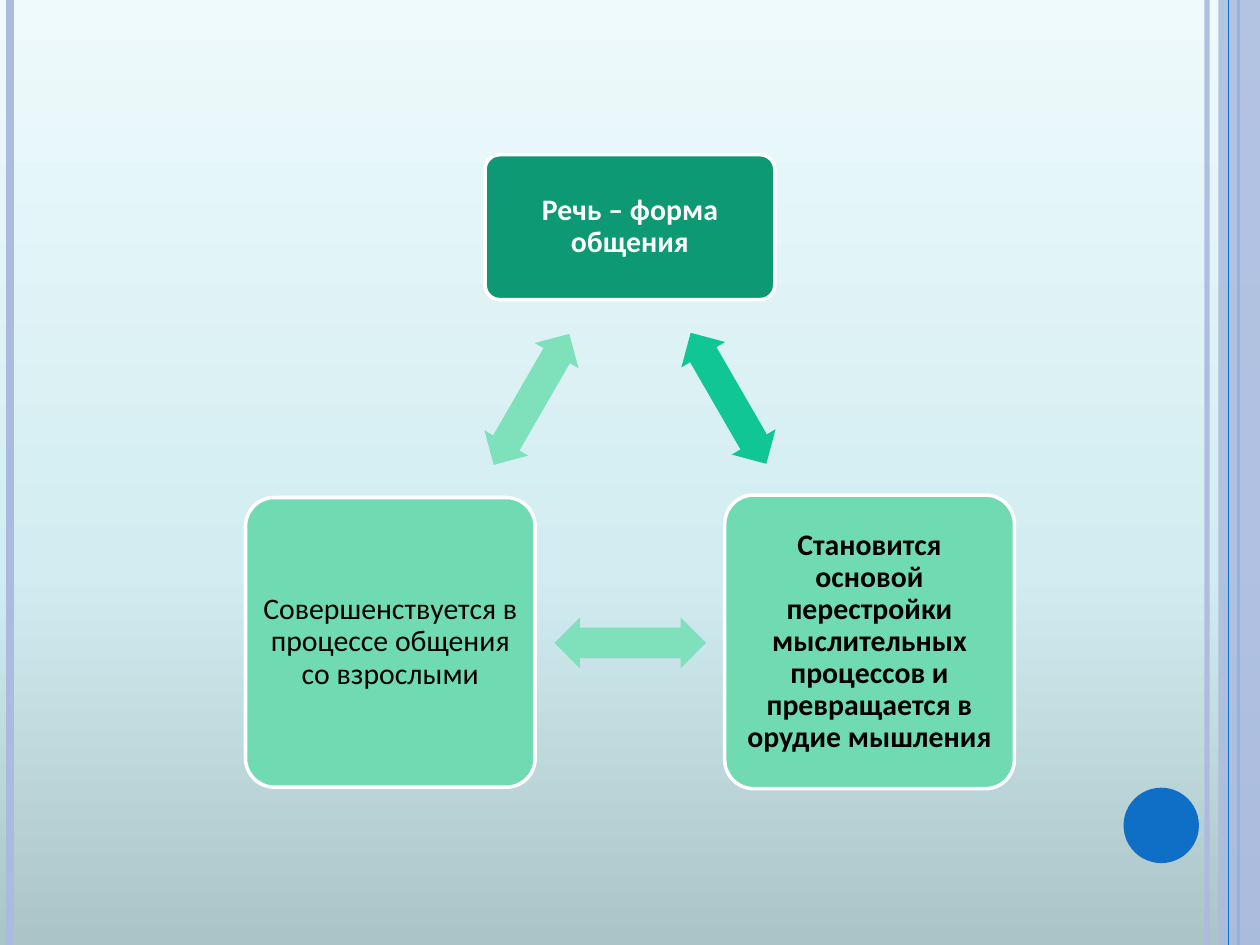
from copy import deepcopy

from lxml.etree import SubElement
from pptx import Presentation
from pptx.dml.color import RGBColor
from pptx.enum.shapes import MSO_CONNECTOR, MSO_SHAPE
from pptx.enum.text import MSO_ANCHOR, PP_ALIGN
from pptx.oxml.ns import qn
from pptx.util import Cm, Pt

WIDTH, HEIGHT = 25.4, 19.05
BLUE, LAVENDER, WHITE, BLACK = "0F6FC6", "ABBBDF", "FFFFFF", "000000"
DARK_GREEN, GREEN, MINT, PALE_MINT = "0C9973", "0FC694", "70DBB2", "7FE1BB"


def color(value):
    """Turn a hex string into a colour."""
    return RGBColor.from_string(value)


def apply_format(target, values):
    """Set each named attribute on the target."""
    for name, value in values.items():
        setattr(target, name, value)


def set_alpha(element, percent):
    """Give the first solid colour in an element an opacity in percent."""
    SubElement(next(element.iter(qn("a:srgbClr"))), qn("a:alpha"), val=str(percent * 1000))


def set_background(slide, stops):
    """Fill the background with a gradient that rises from the bottom."""
    fill = slide.background.fill
    fill.gradient()
    fill.gradient_angle = 90
    stop_list = next(slide.element.iter(qn("a:gsLst")))
    while len(stop_list) < len(stops):
        stop_list.append(deepcopy(stop_list[0]))
    for stop, (position, value) in zip(fill.gradient_stops, stops):
        stop.position = position
        stop.color.rgb = color(value)


def add_stripe(slide, x, value, width, alpha=100):
    """Draw a vertical line over the full slide height."""
    connector = slide.shapes.add_connector(
        MSO_CONNECTOR.STRAIGHT, Cm(x), 0, Cm(x), Cm(HEIGHT))
    connector.line.color.rgb = color(value)
    connector.line.width = Pt(width)
    properties = connector.element.spPr
    if alpha < 100:
        set_alpha(properties, alpha)
    SubElement(properties, qn("a:effectLst"))


def add_figure(slide, kind, box, value, adjustments=()):
    """Add a plain filled preset shape without outline."""
    shape = slide.shapes.add_shape(kind, *map(Cm, box))
    shape.shadow.inherit = False
    shape.fill.solid()
    shape.fill.fore_color.rgb = color(value)
    shape.line.fill.background()
    for index, adjustment in enumerate(adjustments):
        shape.adjustments[index] = adjustment
    return shape


def add_card(slide, box, value, text, text_color, bold):
    """Add a rounded box with a white outline and centred text."""
    shape = add_figure(slide, MSO_SHAPE.ROUNDED_RECTANGLE, box, value, [0.1])
    shape.line.color.rgb = color(WHITE)
    shape.line.width = Pt(2)
    frame = shape.text_frame
    margins = {f"margin_{side}": Cm(0.18) for side in ("left", "top", "right", "bottom")}
    apply_format(frame, {"word_wrap": True, "vertical_anchor": MSO_ANCHOR.MIDDLE, **margins})
    paragraph = frame.paragraphs[0]
    apply_format(paragraph, {"alignment": PP_ALIGN.CENTER, "line_spacing": 0.9})
    run = paragraph.add_run()
    run.text = text
    apply_format(run.font, {"name": "Calibri", "size": Pt(17), "bold": bold})
    run.font.color.rgb = color(text_color)


def add_arrow(slide, left, top, rotation, value):
    """Add a rotated double-headed arrow."""
    box = (left, top, 3.05, 1.02)
    shape = add_figure(slide, MSO_SHAPE.LEFT_RIGHT_ARROW, box, value, [0.6, 0.5])
    shape.rotation = rotation


def add_decoration(slide):
    """Draw the stripes on both edges and the round badge."""
    add_stripe(slide, 24.33, LAVENDER, 3, alpha=93)
    add_stripe(slide, 0.21, LAVENDER, 4.5)
    add_stripe(slide, 24.97, BLUE, 1.5)
    band = add_figure(slide, MSO_SHAPE.RECTANGLE, (24.56, 0, WIDTH - 24.56, HEIGHT), LAVENDER)
    set_alpha(band.element.spPr, 87)
    add_stripe(slide, 24.76, BLUE, 0.75)
    add_figure(slide, MSO_SHAPE.OVAL, (22.65, 15.88, 1.52, 1.52), BLUE)


def main():
    """Build the slide and save it."""
    presentation = Presentation()
    apply_format(presentation, {"slide_width": Cm(WIDTH), "slide_height": Cm(HEIGHT)})
    slide = presentation.slides.add_slide(presentation.slide_layouts[6])
    set_background(slide, [(0, "AAC4C7"), (0.4, "D2EDF1"), (1, "EEFAFC")])
    add_decoration(slide)
    add_card(slide, (9.78, 3.12, 5.84, 2.92), DARK_GREEN,
             "Речь – форма общения", WHITE, True)
    add_arrow(slide, 13.16, 7.52, 60, GREEN)
    add_card(slide, (14.61, 9.98, 5.84, 5.92), MINT,
             "Становится основой перестройки мыслительных процессов "
             "и превращается в орудие мышления", BLACK, True)
    add_arrow(slide, 11.18, 12.45, 180, PALE_MINT)
    add_card(slide, (4.95, 10.03, 5.84, 5.84), MINT,
             "Совершенствуется в процессе общения со взрослыми", BLACK, False)
    add_arrow(slide, 9.19, 7.54, 300, PALE_MINT)
    presentation.save("out.pptx")


if __name__ == "__main__":
    main()
